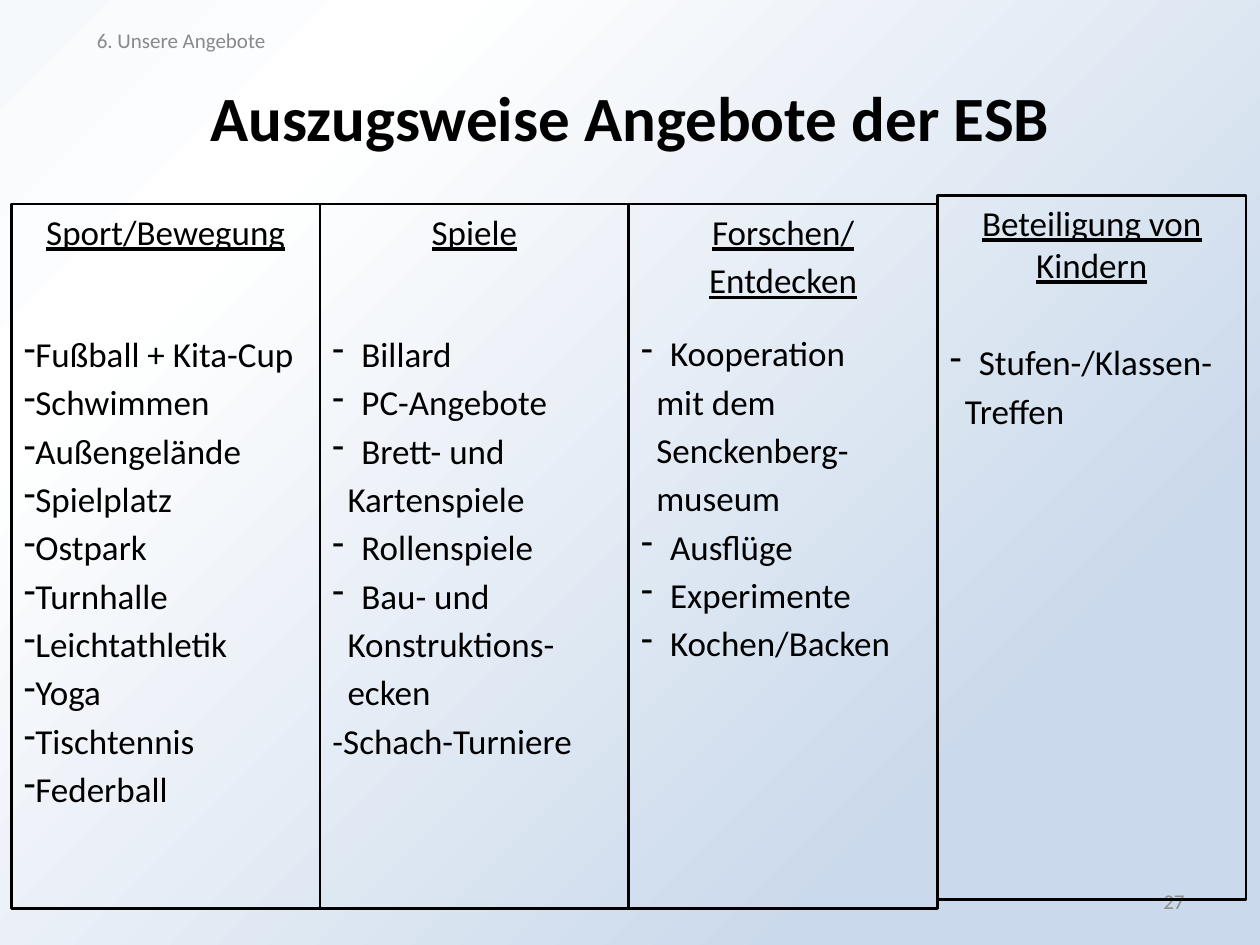
"""Build the slide listing excerpts of the ESB's activities in four columns."""
from dataclasses import dataclass

from lxml import etree
from pptx import Presentation
from pptx import util as u
from pptx.dml.color import RGBColor
from pptx.enum import shapes, text
from pptx.oxml import ns

SECTION = "6. Unsere Angebote"
TITLE = "Auszugsweise Angebote der ESB"
PAGE_NUMBER = "27"

BULLET, CONTINUED, PLAIN = "bullet", "continued", "plain"

COLUMNS = [
    {
        "headings": ["Sport/Bewegung"], "top": 1.62, "gap": 45.8, "hang": 0,
        "items": [(BULLET, item) for item in (
            "Fußball + Kita-Cup", "Schwimmen", "Außengelände", "Spielplatz",
            "Ostpark", "Turnhalle", "Leichtathletik", "Yoga", "Tischtennis",
            "Federball",
        )],
    },
    {
        "headings": ["Spiele"], "top": 1.62, "gap": 45.8, "hang": 0.23,
        "items": [
            (BULLET, "Billard"),
            (BULLET, "PC-Angebote"),
            (BULLET, "Brett- und"),
            (CONTINUED, "Kartenspiele"),
            (BULLET, "Rollenspiele"),
            (BULLET, "Bau- und"),
            (CONTINUED, "Konstruktions-"),
            (CONTINUED, "ecken"),
            (PLAIN, "-Schach-Turniere"),
        ],
    },
    {
        "headings": ["Forschen/", "Entdecken"], "top": 1.62, "gap": 17.8, "hang": 0.23,
        "items": [
            (BULLET, "Kooperation"),
            (CONTINUED, "mit dem"),
            (CONTINUED, "Senckenberg-"),
            (CONTINUED, "museum"),
            (BULLET, "Ausflüge"),
            (BULLET, "Experimente"),
            (BULLET, "Kochen/Backen"),
        ],
    },
    {
        "headings": ["Beteiligung von Kindern"], "top": 1.55, "gap": 31.6, "hang": 0.23,
        "items": [(BULLET, "Stufen-/Klassen-"), (CONTINUED, "Treffen")],
    },
]

COLUMN_LEFT, COLUMN_WIDTH, COLUMN_HEIGHT = 0.09, 2.45, 5.59
CONTINUED_INDENT = 0.12


@dataclass(frozen=True)
class Theme:
    """Colours, font and type sizes of the slide."""
    font: str = "Calibri"
    ink: str = "000000"
    section: str = "898989"
    number: str = "8C8C8C"
    background: tuple = ((0, "F6F9FC"), (20, "FFFFFF"), (79, "CAD9EB"))
    title_size: float = 36
    body_size: float = 20
    small_size: float = 12
    paragraph_gap: float = 3.6
    line_width: float = 1.5


THEME = Theme()


def paint_background(slide):
    """Fill the background with the diagonal gradient."""
    fill = slide.background.fill
    fill.gradient()
    fill.gradient_angle = 315
    stops = next(slide.element.iter(ns.qn("a:gsLst")))
    for stop in list(stops):
        stops.remove(stop)
    for percent, color in THEME.background:
        stop = etree.SubElement(stops, ns.qn("a:gs"), pos=str(percent * 1000))
        etree.SubElement(stop, ns.qn("a:srgbClr"), val=color)


def style(paragraph, size, color, alignment, bold=False, underline=False):
    """Align a paragraph and format its runs."""
    paragraph.alignment = alignment
    for run in paragraph.runs:
        font = run.font
        font.name = THEME.font
        font.size = u.Pt(size)
        font.bold = bold
        font.underline = underline
        font.color.rgb = RGBColor.from_string(color)


def add_label(slide, box, wording, size, color, alignment, bold=False):
    """Add a vertically centred line of text."""
    text_frame = slide.shapes.add_textbox(*map(u.Inches, box)).text_frame
    text_frame.word_wrap = True
    text_frame.vertical_anchor = text.MSO_ANCHOR.MIDDLE
    text_frame.text = wording
    style(text_frame.paragraphs[0], size, color, alignment, bold)


def set_indent(paragraph, kind, hang):
    """Apply the bullet and indent that belong to an item kind."""
    properties = paragraph._p.get_or_add_pPr()
    margin = {BULLET: hang, CONTINUED: CONTINUED_INDENT, PLAIN: 0}[kind]
    properties.set("marL", str(u.Inches(margin)))
    properties.set("indent", str(u.Inches(-hang if kind == BULLET else 0)))
    if kind == BULLET:
        etree.SubElement(properties, ns.qn("a:buFontTx"))
        etree.SubElement(properties, ns.qn("a:buChar"), char="-")
    else:
        etree.SubElement(properties, ns.qn("a:buNone"))


def add_column(slide, index, column):
    """Add one framed column with its heading and items."""
    left = COLUMN_LEFT + index * COLUMN_WIDTH
    box = (left, column["top"], COLUMN_WIDTH, COLUMN_HEIGHT)
    shape = slide.shapes.add_shape(shapes.MSO_SHAPE.RECTANGLE, *map(u.Inches, box))
    shape.shadow.inherit = False
    shape.fill.background()
    shape.line.color.rgb = RGBColor.from_string(THEME.ink)
    shape.line.width = u.Pt(THEME.line_width)
    text_frame = shape.text_frame
    text_frame.word_wrap = True
    text_frame.vertical_anchor = text.MSO_ANCHOR.TOP
    headings = column["headings"]
    text_frame.text = "\n".join(headings + [item for _, item in column["items"]])
    paragraphs = text_frame.paragraphs
    for paragraph in paragraphs[1:]:
        paragraph.space_before = u.Pt(THEME.paragraph_gap)
    for paragraph in paragraphs[:len(headings)]:
        style(paragraph, THEME.body_size, THEME.ink, text.PP_ALIGN.CENTER, underline=True)
    item_paragraphs = paragraphs[len(headings):]
    item_paragraphs[0].space_before = u.Pt(column["gap"])
    for paragraph, (kind, _) in zip(item_paragraphs, column["items"]):
        set_indent(paragraph, kind, column["hang"])
        style(paragraph, THEME.body_size, THEME.ink, text.PP_ALIGN.LEFT)


def main():
    """Assemble and save the presentation."""
    presentation = Presentation()
    presentation.slide_width = u.Inches(10)
    presentation.slide_height = u.Inches(7.5)
    slide = presentation.slides.add_slide(presentation.slide_layouts[6])
    paint_background(slide)
    add_label(slide, (7.17, 6.95, 2.33, 0.4), PAGE_NUMBER,
              THEME.small_size, THEME.number, text.PP_ALIGN.RIGHT)
    add_label(slide, (0.5, 0.3, 9, 1.25), TITLE,
              THEME.title_size, THEME.ink, text.PP_ALIGN.CENTER, bold=True)
    for index, column in enumerate(COLUMNS):
        add_column(slide, index, column)
    add_label(slide, (0.67, 0.12, 3.17, 0.4), SECTION,
              THEME.small_size, THEME.section, text.PP_ALIGN.LEFT)
    presentation.save("out.pptx")


if __name__ == "__main__":
    main()
